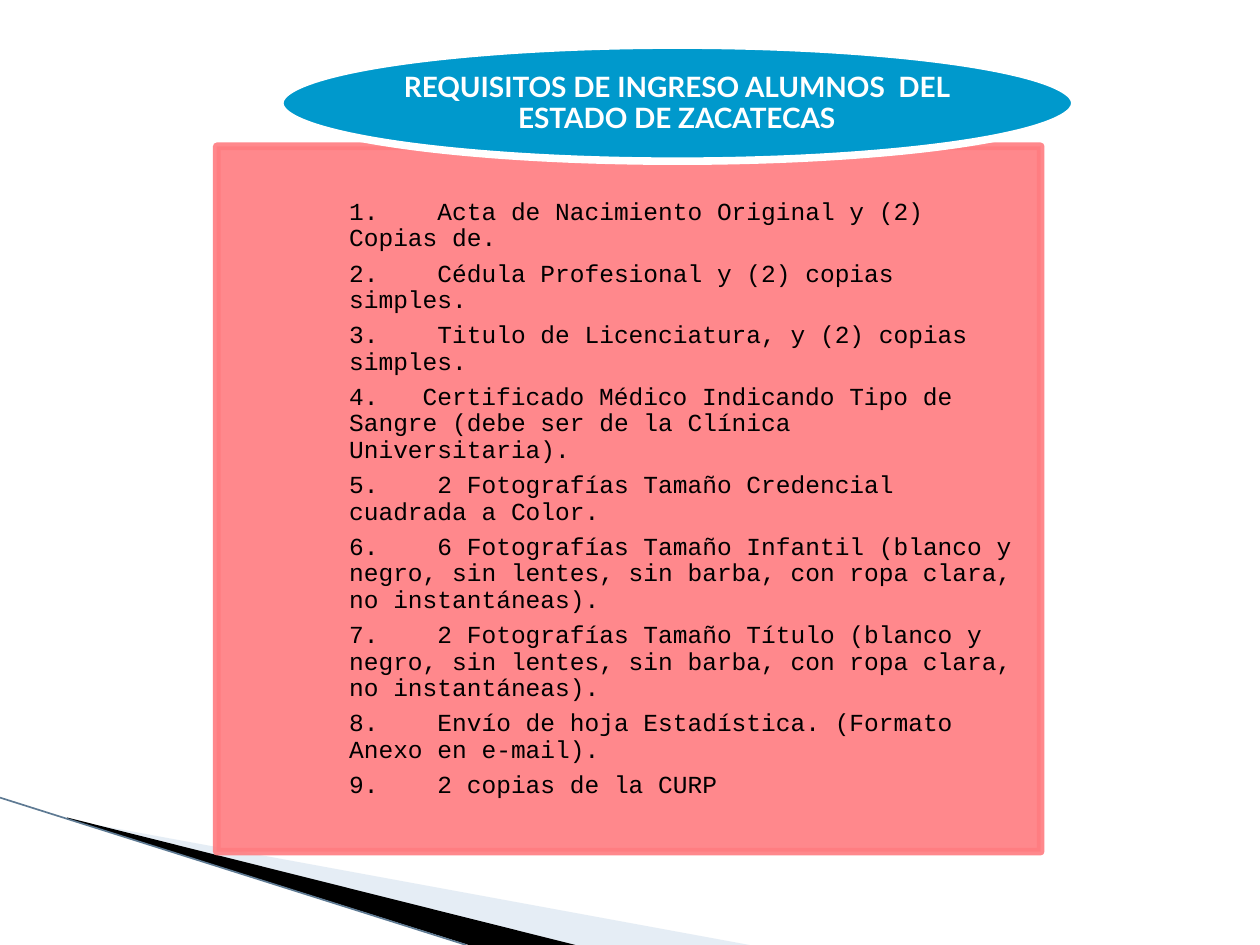
import dataclasses

import lxml.etree as etree
import pptx
import pptx.dml.color
import pptx.enum.shapes
import pptx.enum.text
import pptx.oxml.ns
import pptx.util

Cm, Pt = pptx.util.Cm, pptx.util.Pt
qn = pptx.oxml.ns.qn
SHAPE = pptx.enum.shapes.MSO_SHAPE
ALIGN = pptx.enum.text.PP_ALIGN


@dataclasses.dataclass
class Wedge:
    points: list[tuple[float, float]]
    color: str
    alpha: int = 100


@dataclasses.dataclass
class Item:
    text: str
    tab: float = 1.78


WEDGES = [
    Wedge([(1.4, 16.53), (15.11, 19.05), (11.58, 19.05), (1.4, 16.51)], "C0D3E6", 40),
    Wedge([(1.35, 16.48), (11.6, 19.05), (9.45, 19.05), (1.37, 16.51)], "000000"),
]
TITLE = "REQUISITOS DE INGRESO ALUMNOS  DEL ESTADO DE ZACATECAS"
ITEMS = [
    Item("Acta de Nacimiento Original y (2) Copias de."),
    Item("Cédula Profesional y (2) copias simples."),
    Item("Titulo de Licenciatura, y (2) copias simples."),
    Item("Certificado Médico Indicando Tipo de Sangre "
         "(debe ser de la Clínica Universitaria).", tab=1.48),
    Item("2 Fotografías Tamaño Credencial cuadrada a Color."),
    Item("6 Fotografías Tamaño Infantil (blanco y negro, sin lentes, "
         "sin barba, con ropa clara, no instantáneas)."),
    Item("2 Fotografías Tamaño Título (blanco y negro, sin lentes, "
         "sin barba, con ropa clara, no instantáneas)."),
    Item("Envío de hoja Estadística. (Formato Anexo en e-mail)."),
    Item("2 copias de la CURP"),
]


def paint(target, color: str, alpha: int = 100) -> None:
    """Give a fill or font one solid colour, with opacity in percent."""
    if hasattr(target, "solid"):
        target.solid()
        target = target.fore_color
    else:
        target = target.color
    target.rgb = pptx.dml.color.RGBColor.from_string(color)


def fade(shape, alpha: int) -> None:
    """Set the opacity of every colour of a shape, in percent."""
    for color in shape.element.spPr.iter(qn("a:srgbClr")):
        etree.SubElement(color, qn("a:alpha")).set("val", str(alpha * 1000))


def draw_wedge(slide, wedge: Wedge) -> None:
    first, *rest = [(Cm(x), Cm(y)) for x, y in wedge.points]
    pen = slide.shapes.build_freeform(*first)
    pen.add_line_segments(rest)
    shape = pen.convert_to_shape()
    shape.shadow.inherit = False
    paint(shape.fill, wedge.color)
    shape.line.fill.background()
    if wedge.alpha < 100:
        fade(shape, wedge.alpha)


def draw_line(slide, start: tuple[float, float], end: tuple[float, float], color: str) -> None:
    line = slide.shapes.add_connector(
        pptx.enum.shapes.MSO_CONNECTOR.STRAIGHT, *map(Cm, start + end))
    paint(line.line.fill, color)
    line.line.width = Pt(0.95)
    etree.SubElement(line.element.spPr, qn("a:effectLst"))


def draw_shape(slide, kind, box: tuple[float, ...], fill: str, edge: str):
    shape = slide.shapes.add_shape(kind, *map(Cm, box))
    shape.shadow.inherit = False
    paint(shape.fill, fill)
    paint(shape.line.fill, edge)
    shape.line.width = Pt(4.33)
    return shape


def set_frame(frame, inset: float = 0) -> None:
    frame.word_wrap = True
    frame.auto_size = pptx.enum.text.MSO_AUTO_SIZE.NONE
    frame.vertical_anchor = pptx.enum.text.MSO_ANCHOR.MIDDLE
    frame.margin_left = 0
    frame.margin_top = frame.margin_right = frame.margin_bottom = Cm(inset)


def write(para, text: str, *, font: str, size: float, color: str,
          bold: bool = False, align=ALIGN.LEFT, after: float = 0,
          tab: float | None = None) -> None:
    para.alignment = align
    para.line_spacing = 0.9
    para.space_before = Pt(0)
    para.space_after = Pt(after)
    if tab is not None:
        tabs = etree.SubElement(para._p.get_or_add_pPr(), qn("a:tabLst"))
        etree.SubElement(tabs, qn("a:tab"), pos=str(Cm(tab)), algn="l")
    run = para.add_run()
    run.text = text
    run.font.name, run.font.size, run.font.bold = font, Pt(size), bold
    paint(run.font, color)


def draw_list(slide, box: tuple[float, ...], items: list[Item]) -> None:
    frame = slide.shapes.add_textbox(*map(Cm, box)).text_frame
    set_frame(frame, 0.28)
    for num, item in enumerate(items, 1):
        para = frame.paragraphs[0] if num == 1 else frame.add_paragraph()
        write(para, f"{num}.\t{item.text}", font="Courier New", size=14,
              color="000000", after=5, tab=item.tab)


def draw_title(slide, box: tuple[float, ...], text: str) -> None:
    title = slide.shapes.title
    title.left, title.top, title.width, title.height = map(Cm, box)
    set_frame(title.text_frame)
    write(title.text_frame.paragraphs[0], text, font="Lato", size=16,
          color="FFFFFF", bold=True, align=ALIGN.CENTER)
    # Bring the title in front of its ellipse
    title.element.getparent().append(title.element)


def main() -> None:
    deck = pptx.Presentation()
    deck.slide_width, deck.slide_height = Cm(25.4), Cm(19.05)
    slide = deck.slides.add_slide(deck.slide_layouts.get_by_name("Title Only"))
    paint(slide.background.fill, "FFFFFF")
    for wedge in WEDGES:
        draw_wedge(slide, wedge)
    draw_line(slide, (0, 16.08), (9.4, 19.05), "5E7A93")
    panel = draw_shape(slide, SHAPE.RECTANGLE, (4.37, 2.95, 16.61, 14.22), "FF7C80", "FF7C80")
    fade(panel, 90)
    draw_list(slide, (7.04, 2.95, 13.94, 14.22), ITEMS)
    draw_shape(slide, SHAPE.OVAL, (5.64, 0.91, 16.03, 2.34), "0099CC", "FFFFFF")
    draw_title(slide, (7.98, 1.27, 11.33, 1.65), TITLE)
    deck.save("out.pptx")


if __name__ == "__main__":
    main()
